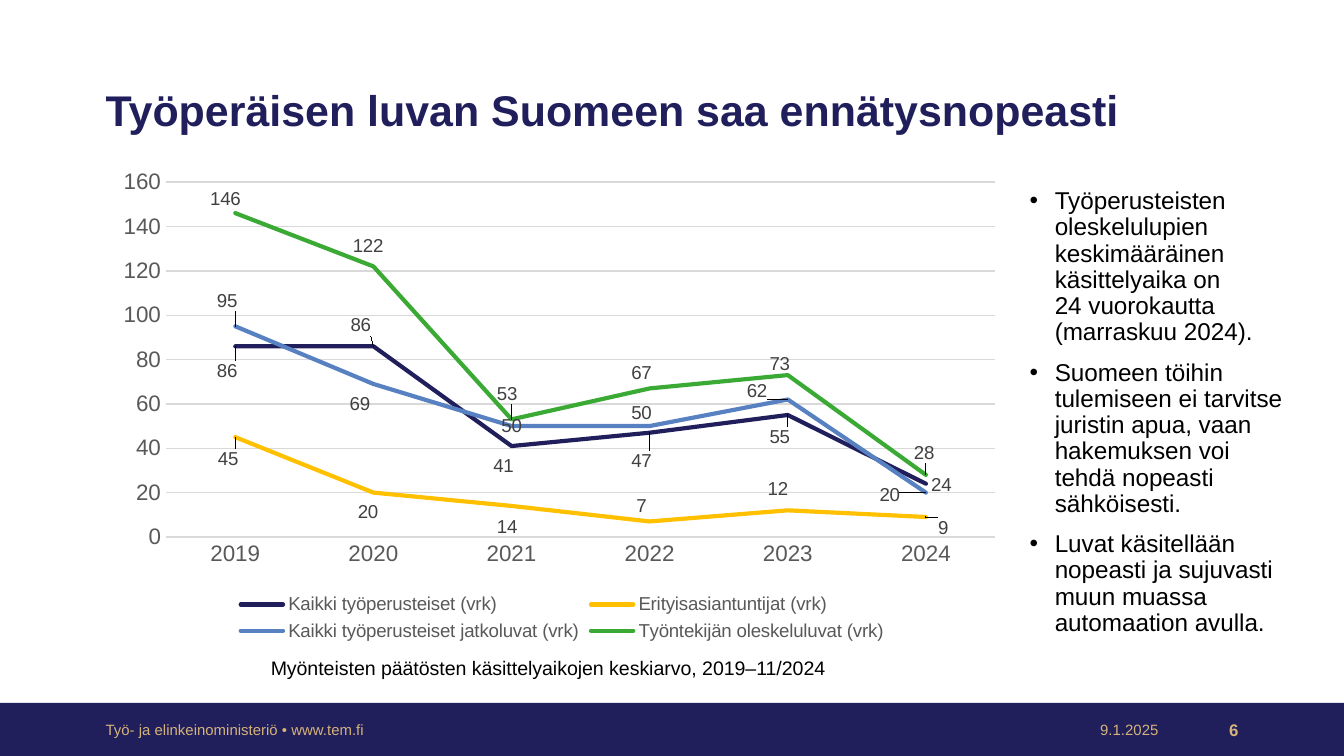
from dataclasses import dataclass

from pptx import Presentation
from pptx.chart.data import CategoryChartData
from pptx.dml.color import RGBColor
from pptx.enum.chart import XL_CHART_TYPE, XL_LABEL_POSITION, XL_LEGEND_POSITION, XL_TICK_MARK
from pptx.enum.shapes import MSO_SHAPE
from pptx.enum.text import MSO_ANCHOR, PP_ALIGN
from pptx.oxml import parse_xml
from pptx.oxml.ns import nsdecls, qn
from pptx.util import Pt

PX = 9525


@dataclass(frozen=True)
class Theme:
    """Colours, font and type sizes of the slide."""
    font: str = "Arial"
    navy: str = "201E5B"
    gold: str = "D5B37A"
    yellow: str = "FFC000"
    blue: str = "5881C1"
    green: str = "3AAA35"
    text: str = "000000"
    axis: str = "595959"
    label: str = "404040"
    grid: str = "D9D9D9"
    title_size: float = 23
    body_size: float = 13
    caption_size: float = 10.5
    axis_size: float = 12
    label_size: float = 10
    footer_size: float = 8
    number_size: float = 9


T = Theme()
YEARS = ["2019", "2020", "2021", "2022", "2023", "2024"]
SERIES = [
    ("Kaikki työperusteiset (vrk)", T.navy, [86, 86, 41, 47, 55, 24],
     [(-6, 18), (-9, -15), (-6, 14), (-6, 20), (-6, 16), (11, 1)]),
    ("Erityisasiantuntijat (vrk)", T.yellow, [45, 20, 14, 7, 12, 9],
     [(-5, 16), (-4, 14), (-3, 15), (-6, -11), (-7, -15), (12, 8)]),
    ("Kaikki työperusteiset jatkoluvat (vrk)", T.blue, [95, 69, 50, 50, 62, 20],
     [(-6, -18), (-10, 14), (0, 0), (-6, -9), (-22, -6), (-26, 2)]),
    ("Työntekijän oleskeluluvat (vrk)", T.green, [146, 122, 53, 67, 73, 28],
     [(-7, -10), (-4, -14), (-3, -18), (-6, -11), (-6, -8), (-1, -16)]),
]
BULLETS = [
    "Työperusteisten oleskelulupien keskimääräinen käsittelyaika on \v24 vuorokautta (marraskuu 2024).",
    "Suomeen töihin tulemiseen ei tarvitse juristin apua, vaan hakemuksen voi tehdä nopeasti sähköisesti.",
    "Luvat käsitellään nopeasti ja sujuvasti muun muassa automaation avulla.",
]


def emu(box):
    """Turn a box in px into EMU."""
    return [v * PX for v in box]


def style(font, size, color, bold=False):
    """Set typeface, size, colour and weight of a font."""
    font.name, font.size, font.bold = T.font, Pt(size), bold
    font.color.rgb = RGBColor.from_string(color)


def add_text(s, box, text, size, color, bold=False, align=PP_ALIGN.LEFT, wrap=True,
             anchor=MSO_ANCHOR.MIDDLE):
    """Add a one-paragraph text box and return its text frame."""
    tf = s.shapes.add_textbox(*emu(box)).text_frame
    tf.word_wrap, tf.vertical_anchor = wrap, anchor
    p = tf.paragraphs[0]
    p.text, p.alignment = text, align
    for r in p.runs:
        style(r.font, size, color, bold)
    return tf


def add_title(s, box):
    """Add the slide title."""
    tf = add_text(s, box, "Työperäisen luvan Suomeen saa ennätysnopeasti", T.title_size, T.navy, True)
    tf.paragraphs[0].line_spacing = 0.9


def add_bullets(s, box):
    """Add the bulleted text column."""
    tf = s.shapes.add_textbox(*emu(box)).text_frame
    tf.word_wrap = True
    for i, text in enumerate(BULLETS):
        p = tf.paragraphs[0] if i == 0 else tf.add_paragraph()
        p.text, p.line_spacing = text, 0.9
        p.space_before = Pt(7.5 if i else 0)
        pPr = p._p.get_or_add_pPr()
        pPr.set("marL", str(18 * PX))
        pPr.set("indent", str(-18 * PX))
        pPr.append(parse_xml(f'<a:buFont {nsdecls("a")} typeface="{T.font}"/>'))
        pPr.append(parse_xml(f'<a:buChar {nsdecls("a")} char="•"/>'))
        for r in p.runs:
            style(r.font, T.body_size, T.text)


def manual_layout(inner=False, **lengths):
    """Return a chart layout element with the given fractions."""
    target = '<c:layoutTarget val="inner"/><c:xMode val="edge"/><c:yMode val="edge"/>' if inner else ""
    parts = "".join(f'<c:{k} val="{v:.3f}"/>' for k, v in lengths.items())
    return parse_xml(f'<c:layout {nsdecls("c")}><c:manualLayout>{target}{parts}'
                     '</c:manualLayout></c:layout>')


def format_axes(chart):
    """Style both axes and the gridlines."""
    for axis in (chart.category_axis, chart.value_axis):
        axis.major_tick_mark = axis.minor_tick_mark = XL_TICK_MARK.NONE
        style(axis.tick_labels.font, T.axis_size, T.axis)
    value = chart.value_axis
    value.minimum_scale, value.maximum_scale, value.major_unit = 0, 160, 20
    value.has_major_gridlines = True
    value.format.line.fill.background()
    for line in (chart.category_axis.format.line, value.major_gridlines.format.line):
        line.width = Pt(0.75)
        line.color.rgb = RGBColor.from_string(T.grid)


def format_series(series, color, offsets, width, height):
    """Style one line and place its labels by px offsets from the points."""
    series.smooth = False
    series.format.line.width = Pt(2.25)
    series.format.line.color.rgb = RGBColor.from_string(color)
    series._element.find(f'.//{qn("a:ln")}').set("cap", "rnd")
    labels = series.data_labels
    labels.show_value, labels.position = True, XL_LABEL_POSITION.CENTER
    style(labels.font, T.label_size, T.label)
    for i, (dx, dy) in enumerate(offsets):
        if (dx, dy) == (0, 0):
            continue
        label = series.points[i].data_label
        label.position = XL_LABEL_POSITION.CENTER
        style(label.font, T.label_size, T.label)
        dLbl = series._element.findall(f'.//{qn("c:dLbl")}')[-1]
        dLbl.insert(1, manual_layout(x=dx / width, y=dy / height))


def add_line_chart(s, box):
    """Add the line chart of processing times."""
    data = CategoryChartData()
    data.categories = YEARS
    for name, _, values, _ in SERIES:
        data.add_series(name, values)
    chart = s.shapes.add_chart(XL_CHART_TYPE.LINE, *emu(box), data).chart
    style(chart.font, T.label_size, T.text)
    chart.has_title = False
    chart.has_legend = True
    chart.legend.position = XL_LEGEND_POSITION.BOTTOM
    chart.legend.include_in_layout = True
    style(chart.legend.font, T.label_size, T.axis)
    format_axes(chart)
    plot = chart.plots[0]
    plot.vary_by_categories = False
    for series, (_, color, _, offsets) in zip(plot.series, SERIES):
        format_series(series, color, offsets, *box[2:])
    area = chart._chartSpace.find(f'.//{qn("c:plotArea")}')
    for old in area.findall(qn("c:layout")):
        area.remove(old)
    area.insert(0, manual_layout(True, x=0.063, y=0.038, w=0.915, h=0.735))


def add_footer(s, box):
    """Add the footer band with sender, date and slide number."""
    x, y, w, h = box
    sp = s.shapes.add_shape(MSO_SHAPE.RECTANGLE, *emu(box))
    sp.shadow.inherit = False
    sp.fill.solid()
    sp.fill.fore_color.rgb = RGBColor.from_string(T.navy)
    sp.line.fill.background()
    top, height = y + 11, 16
    add_text(s, (x + 66, top, 324, height), "Työ- ja elinkeinoministeriö • www.tem.fi",
             T.footer_size, T.gold)
    add_text(s, (x + w - 197, top, 74, height), "9.1.2025", T.footer_size, T.gold,
             align=PP_ALIGN.RIGHT)
    add_text(s, (x + w - 123, top, 57, height), "6", T.number_size, T.gold, True, PP_ALIGN.RIGHT)


def main():
    """Build and save the slide."""
    prs = Presentation()
    prs.slide_width, prs.slide_height = 960 * PX, 540 * PX
    s = prs.slides.add_slide(prs.slide_layouts[6])
    add_footer(s, (0, 502, 960, 38))
    add_title(s, (66, 41, 756, 79))
    add_text(s, (184, 464, 428, 27), "Myönteisten päätösten käsittelyaikojen keskiarvo, 2019–11/2024",
             T.caption_size, T.text, wrap=False, anchor=MSO_ANCHOR.TOP)
    add_line_chart(s, (78, 117, 647, 345))
    add_bullets(s, (726, 130, 204, 345))
    prs.save("out.pptx")


if __name__ == "__main__":
    main()
